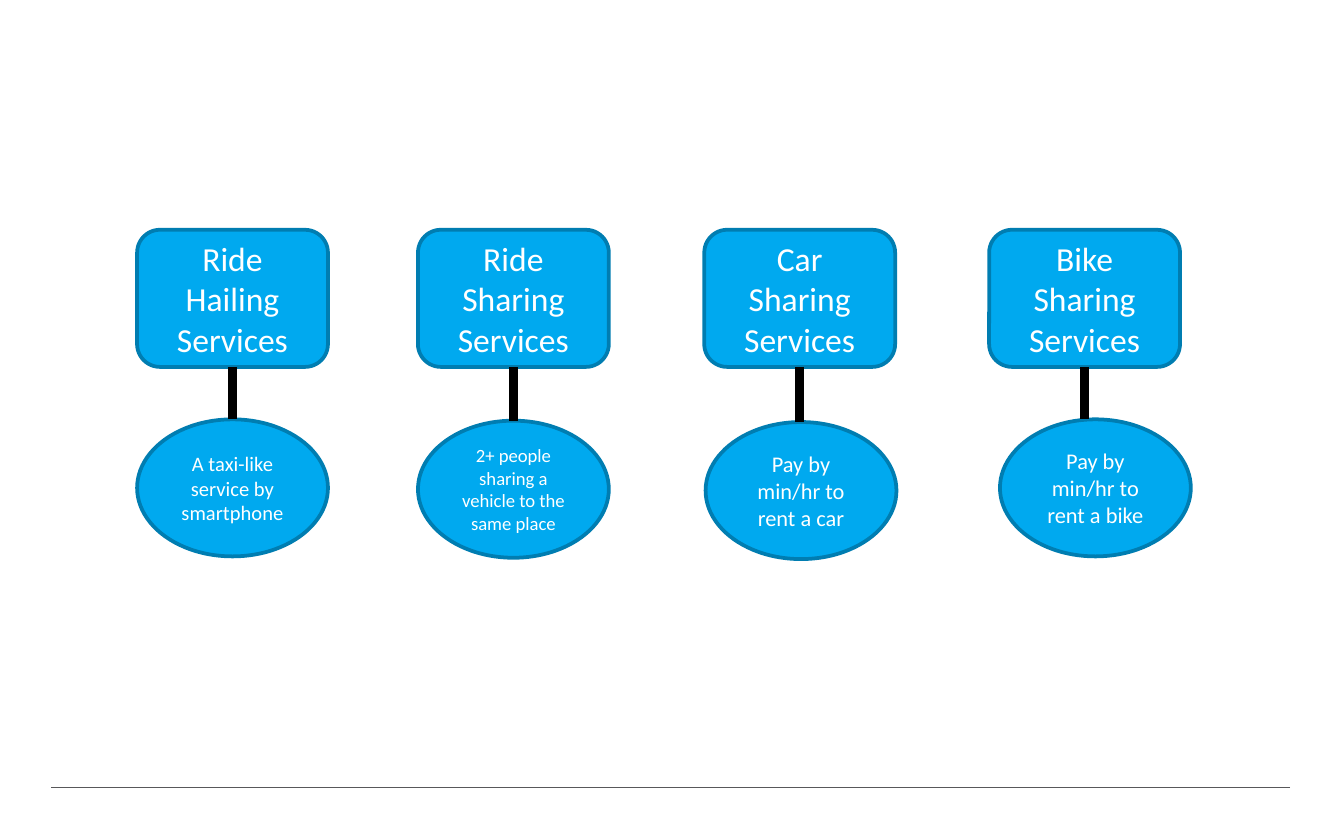
from typing import NamedTuple

from lxml import etree
from pptx import Presentation
from pptx import util as u
from pptx.dml.color import RGBColor
from pptx.enum import shapes, text
from pptx.oxml.ns import qn

COLORS = {
    "fill": "00A9EF",
    "outline": "007DB1",
    "text": "FFFFFF",
    "link": "000000",
    "rule": "58585A",
}
FONT = "Calibri"
WIDTH, HEIGHT = 1.42, 1.02
BOX_TOP = 1.71


class Service(NamedTuple):
    title: str
    left: float
    detail: str
    detail_left: float
    detail_top: float
    detail_size: float


SERVICES = [
    Service("Ride Hailing Services", 1.02, "A taxi-like service by smartphone", 1.02, 3.12, 11),
    Service("Ride Sharing Services", 3.11, "2+ people sharing a vehicle to the same place", 3.11, 3.13, 10),
    Service("Car Sharing Services", 5.24, "Pay by min/hr to rent a car", 5.25, 3.14, 12),
    Service("Bike Sharing Services", 7.36, "Pay by min/hr to rent a bike", 7.44, 3.12, 12),
]


def color(name: str) -> RGBColor:
    return RGBColor.from_string(COLORS[name])


def write_text(shape, content: str, *, size: float, color_name: str = "text") -> None:
    frame = shape.text_frame
    frame.word_wrap = True
    frame.vertical_anchor = text.MSO_ANCHOR.MIDDLE
    paragraph = frame.paragraphs[0]
    paragraph.alignment = text.PP_ALIGN.CENTER
    run = paragraph.add_run()
    run.text = content
    run.font.name = FONT
    run.font.size = u.Pt(size)
    run.font.color.rgb = color(color_name)


def add_node(slide, kind, left: float, top: float, content: str, size: float):
    shape = slide.shapes.add_shape(
        kind, u.Inches(left), u.Inches(top), u.Inches(WIDTH), u.Inches(HEIGHT)
    )
    shape.shadow.inherit = False
    shape.fill.solid()
    shape.fill.fore_color.rgb = color("fill")
    shape.line.color.rgb = color("outline")
    shape.line.width = u.Pt(2)
    write_text(shape, content, size=size)
    return shape


def add_line(slide, x1: float, y1: float, x2: float, y2: float, color_name: str, width: float):
    connector = slide.shapes.add_connector(
        shapes.MSO_CONNECTOR.STRAIGHT, u.Inches(x1), u.Inches(y1), u.Inches(x2), u.Inches(y2)
    )
    connector.line.color.rgb = color(color_name)
    connector.line.width = u.Pt(width)
    etree.SubElement(connector._element.spPr, qn("a:effectLst"))
    return connector


def add_service(slide, service: Service) -> None:
    box = add_node(
        slide, shapes.MSO_SHAPE.ROUNDED_RECTANGLE, service.left, BOX_TOP, service.title, 18
    )
    add_node(
        slide, shapes.MSO_SHAPE.OVAL, service.detail_left, service.detail_top,
        service.detail, service.detail_size,
    )
    # Link drops straight from the box to the ellipse
    center = service.left + WIDTH / 2
    link = add_line(slide, center, BOX_TOP + HEIGHT, center, service.detail_top, "link", 4.5)
    link.begin_connect(box, 2)


def main() -> None:
    presentation = Presentation()
    presentation.slide_width = u.Inches(10)
    presentation.slide_height = u.Inches(6.25)
    slide = presentation.slides.add_slide(presentation.slide_layouts[6])

    # Footer rule
    add_line(slide, 9.6, 5.86, 0.38, 5.86, "rule", 0.75)

    # Service types with their descriptions
    for service in SERVICES:
        add_service(slide, service)

    presentation.save("out.pptx")


if __name__ == "__main__":
    main()
